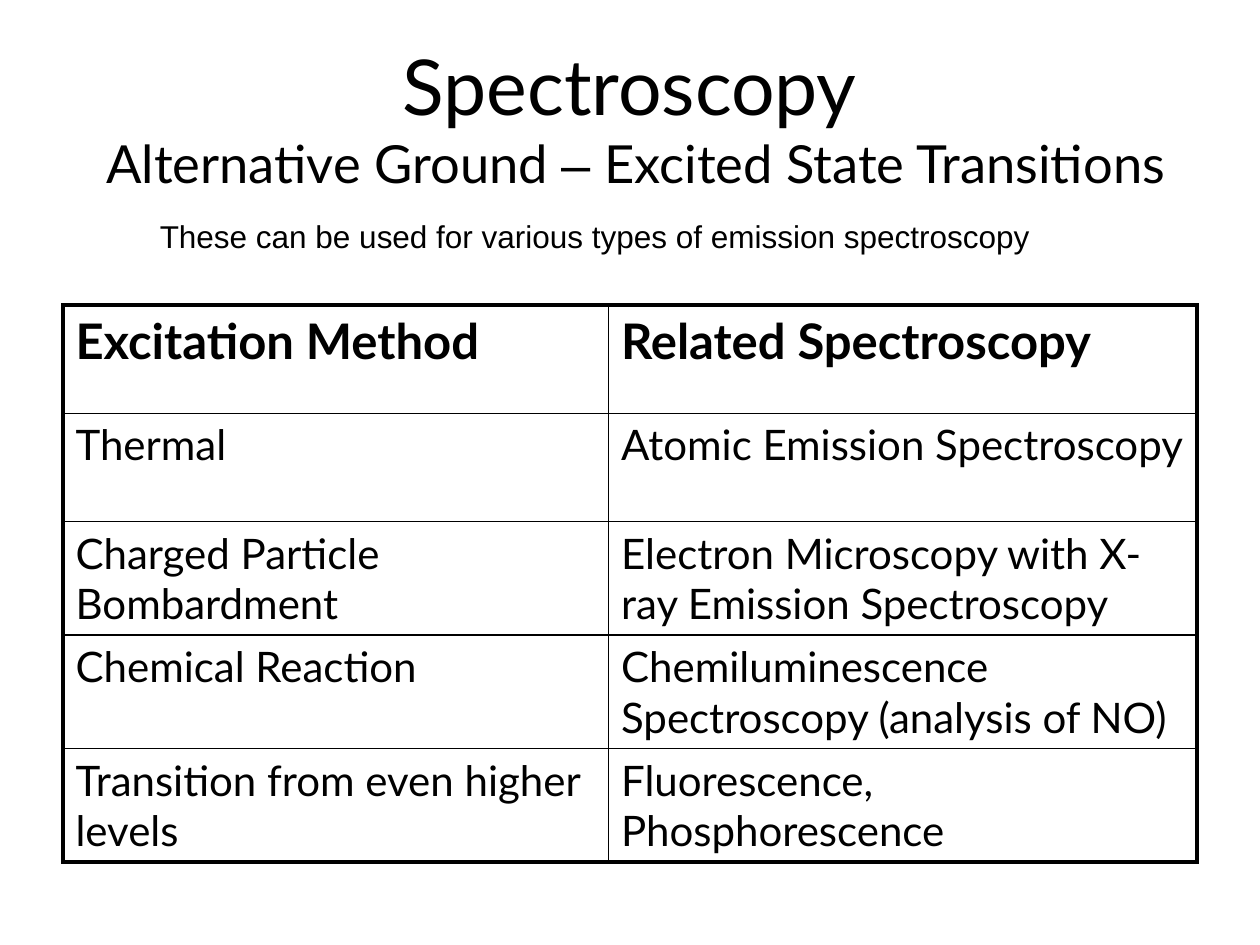
from typing import Any, NamedTuple

from lxml import etree
from pptx import Presentation
from pptx import util as u
from pptx.dml.color import RGBColor
from pptx.enum import text
from pptx.oxml import ns

BLACK = "000000"
THIN, THICK = 1, 2.25


class Phrase(NamedTuple):
    wording: str
    size: float
    font: str = "Lato"
    bold: bool = False


class Method(NamedTuple):
    excitation: str
    spectroscopy: str
    size: float = 24
    bold: bool = False


METHODS = [
    Method("Excitation Method", "Related Spectroscopy", 28, True),
    Method("Thermal", "Atomic Emission Spectroscopy"),
    Method("Charged Particle Bombardment",
           "Electron Microscopy with X-ray Emission Spectroscopy"),
    Method("Chemical Reaction", "Chemiluminescence Spectroscopy (analysis of NO)"),
    Method("Transition from even higher levels", "Fluorescence, Phosphorescence"),
]
SUBTITLE = [
    Phrase(" Alternative Ground ", 30),
    Phrase("–", 30, "Arial"),
    Phrase(" Excited State Transitions", 30),
]
COLUMN_WIDTHS = [4.33, 4.67]
ROW_HEIGHT = 0.86


def apply(target: Any, values: dict[str, Any]) -> None:
    for name, value in values.items():
        setattr(target, name, value)


def place(box: Any, left: float, top: float, width: float, height: float) -> None:
    sides = dict(left=left, top=top, width=width, height=height)
    apply(box, {side: u.Inches(length) for side, length in sides.items()})


def paint(color_format: Any, color: str) -> None:
    color_format.rgb = RGBColor.from_string(color)


def write(paragraph: Any, phrase: Phrase) -> None:
    run = paragraph.add_run()
    run.text = phrase.wording
    apply(run.font, dict(size=u.Pt(phrase.size), name=phrase.font, bold=phrase.bold))
    paint(run.font.color, BLACK)


def add_borders(cell: Any, widths: dict[str, float]) -> None:
    properties = cell._tc.get_or_add_tcPr()
    for index, (side, width) in enumerate(widths.items()):
        line = etree.Element(ns.qn(f"a:ln{side}"), w=str(u.Pt(width)))
        fill = etree.SubElement(line, ns.qn("a:solidFill"))
        etree.SubElement(fill, ns.qn("a:srgbClr"), val=BLACK)
        properties.insert(index, line)


def add_title(slide: Any) -> None:
    title = slide.shapes.title
    place(title, 0.5, 0.3, 9, 1.25)
    apply(title.text_frame, dict(auto_size=text.MSO_AUTO_SIZE.NONE,
                                 vertical_anchor=text.MSO_ANCHOR.MIDDLE))
    heading = title.text_frame.paragraphs[0]
    heading.alignment = text.PP_ALIGN.CENTER
    write(heading, Phrase("Spectroscopy", 44))
    heading.add_line_break()
    for phrase in SUBTITLE:
        write(heading, phrase)


def add_remark(slide: Any) -> None:
    remark = slide.shapes.add_textbox(0, 0, 0, 0)
    place(remark, 1.17, 1.67, 7.83, 0.4)
    remark.text_frame.word_wrap = True
    write(remark.text_frame.paragraphs[0],
          Phrase("These can be used for various types of emission spectroscopy", 18, "Arial"))


def add_methods(slide: Any) -> None:
    rows, columns = len(METHODS), len(COLUMN_WIDTHS)
    methods = slide.shapes.add_table(
        rows, columns, u.Inches(0.5), u.Inches(2.42),
        u.Inches(sum(COLUMN_WIDTHS)), u.Inches(rows * ROW_HEIGHT)).table
    apply(methods, dict(first_row=False, horz_banding=False))
    for column, width in zip(methods.columns, COLUMN_WIDTHS):
        column.width = u.Inches(width)
    for r, method in enumerate(METHODS):
        methods.rows[r].height = u.Inches(ROW_HEIGHT)
        for c, wording in enumerate((method.excitation, method.spectroscopy)):
            cell = methods.cell(r, c)
            cell.fill.background()
            write(cell.text_frame.paragraphs[0],
                  Phrase(wording, method.size, bold=method.bold))
            outer = dict(L=c == 0, R=c == columns - 1, T=r == 0, B=r == rows - 1)
            add_borders(cell, {side: THICK if edge else THIN
                               for side, edge in outer.items()})


def main() -> None:
    deck = Presentation()
    apply(deck, dict(slide_width=u.Inches(10), slide_height=u.Inches(7.5)))
    slide = deck.slides.add_slide(deck.slide_layouts.get_by_name("Title Only"))
    add_title(slide)
    add_remark(slide)
    add_methods(slide)
    deck.save("out.pptx")


if __name__ == "__main__":
    main()
